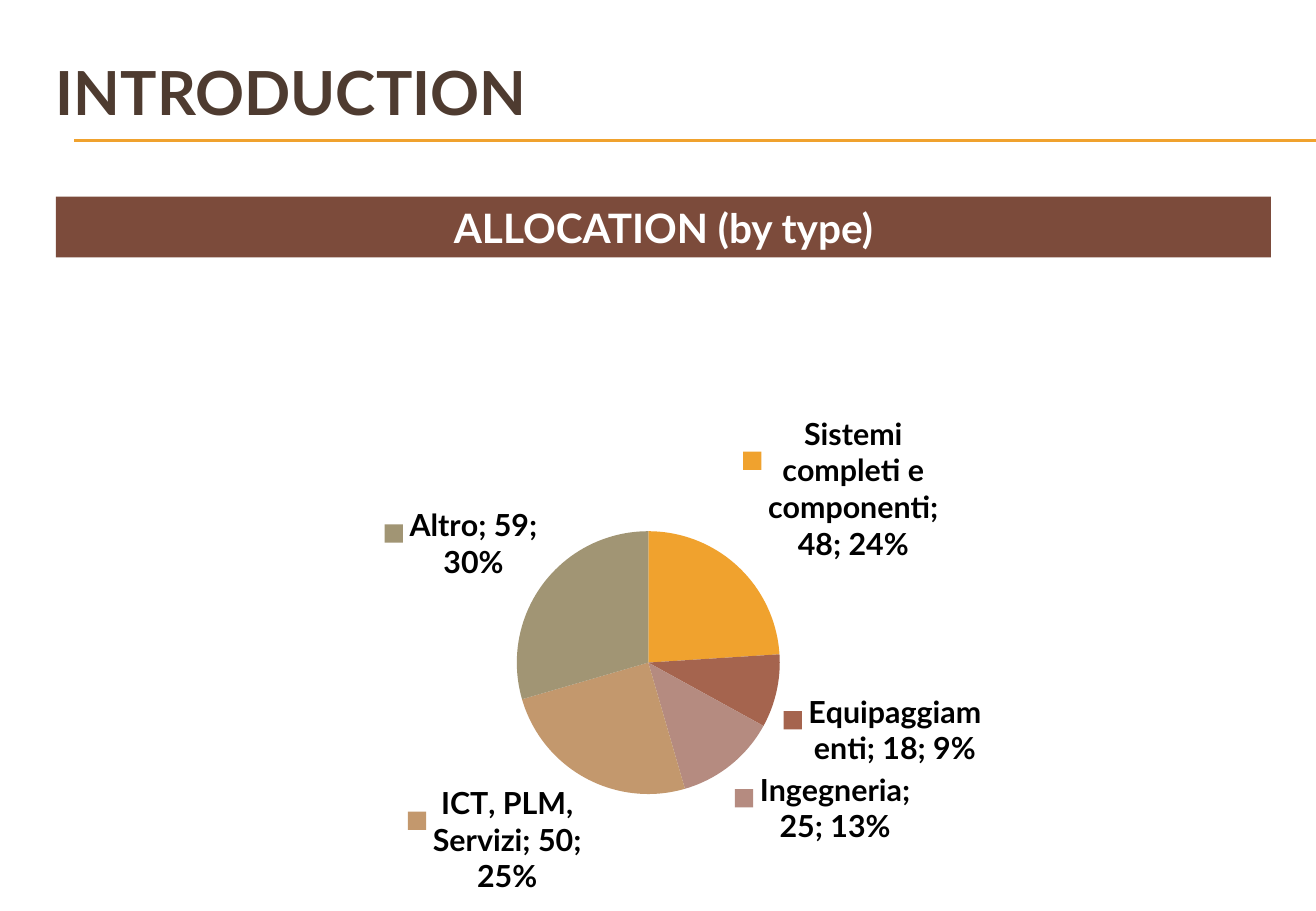
from lxml import etree
from pptx import Presentation
from pptx.chart.data import CategoryChartData as PieData
from pptx.dml.color import RGBColor
from pptx.enum.chart import XL_CHART_TYPE as Kind, XL_LABEL_POSITION as Spot
from pptx.enum.shapes import MSO_CONNECTOR as Line, MSO_SHAPE as Shape
from pptx.enum.text import MSO_ANCHOR as Anchor, PP_ALIGN as Align
from pptx.oxml.ns import qn
from pptx.util import Inches, Pt

WIDTH, HEIGHT = Inches(10.83), Inches(7.5)
FONT = "Lato"
BLACK = RGBColor(0x00, 0x00, 0x00)
WHITE = RGBColor(0xFF, 0xFF, 0xFF)
BROWN = RGBColor(0x4E, 0x3B, 0x30)
RUST = RGBColor(0x7C, 0x4B, 0x3B)
GOLD = RGBColor(0xF0, 0xA2, 0x2E)
BRICK = RGBColor(0xA5, 0x64, 0x4E)
ROSE = RGBColor(0xB5, 0x8B, 0x80)
TAN = RGBColor(0xC3, 0x98, 0x6D)
OLIVE = RGBColor(0xA1, 0x95, 0x74)

SHARES = [
    ("Sistemi completi e componenti", 48, GOLD),
    ("Equipaggiamenti", 18, BRICK),
    ("Ingegneria", 25, ROSE),
    ("ICT, PLM, Servizi", 50, TAN),
    ("Altro", 59, OLIVE),
]


def style(font, size, color):
    font.name, font.size, font.bold = FONT, Pt(size), True
    font.color.rgb = color


def add_title(slide, text, left, top, width, height):
    title = slide.shapes.title
    title.left, title.top, title.width, title.height = left, top, width, height
    frame = title.text_frame
    frame.text = text
    frame.vertical_anchor = Anchor.MIDDLE
    para = frame.paragraphs[0]
    para.alignment = Align.LEFT
    style(para.font, 36, BROWN)


def add_rule(slide, left, top, right):
    """Draw the double hairline under the title."""
    for y in (top, top + Inches(0.01)):
        rule = slide.shapes.add_connector(Line.STRAIGHT, left, y, right, y)
        rule.line.color.rgb = GOLD
        rule.line.width = Pt(0.75)
        etree.SubElement(rule._element.spPr, qn("a:effectLst"))


def add_banner(slide, text, left, top, width, height):
    bar = slide.shapes.add_shape(Shape.RECTANGLE, left, top, width, height)
    bar.shadow.inherit = False
    bar.fill.solid()
    bar.fill.fore_color.rgb = RUST
    bar.line.fill.background()
    bar.text_frame.text = text
    para = bar.text_frame.paragraphs[0]
    para.alignment = Align.CENTER
    style(para.font, 24, WHITE)


def place_plot(chart, **shares):
    """Fix the pie inside its chart; x, y, w, h are shares of the chart."""
    area = chart._chartSpace.chart.plotArea
    for old in area.findall(qn("c:layout")):
        area.remove(old)
    layout = etree.Element(qn("c:layout"))
    area.insert(0, layout)
    manual = etree.SubElement(layout, qn("c:manualLayout"))
    modes = {"layoutTarget": "inner", "xMode": "edge", "yMode": "edge"}
    for tag, val in (modes | shares).items():
        etree.SubElement(manual, qn("c:" + tag)).set("val", str(val))


def add_pie(slide, left, top, width, height):
    data = PieData()
    data.categories = [name for name, _, _ in SHARES]
    data.add_series("Series 1", [val for _, val, _ in SHARES])
    frame = slide.shapes.add_chart(Kind.PIE, left, top, width, height, data)
    chart = frame.chart
    chart.has_title = chart.has_legend = False
    style(chart.font, 18, BLACK)
    place_plot(chart, x=0.33, y=0.35, w=0.3, h=0.45)

    plot = chart.plots[0]
    plot.vary_by_categories = True
    pie = plot.series[0]
    for i, (_, _, color) in enumerate(SHARES):
        fill = pie.points[i].format.fill
        fill.solid()
        fill.fore_color.rgb = color

    labels = pie.data_labels
    style(labels.font, 18, BLACK)
    labels.position = Spot.OUTSIDE_END
    labels.show_legend_key = labels.show_category_name = True
    labels.show_value = labels.show_percentage = True
    gap = etree.Element(qn("c:separator"))
    gap.text = "; "
    labels._element.find(qn("c:showBubbleSize")).addnext(gap)


def main():
    deck = Presentation()
    deck.slide_width, deck.slide_height = WIDTH, HEIGHT
    slide = deck.slides.add_slide(deck.slide_layouts[5])
    add_rule(slide, Inches(0.61), Inches(1.15), WIDTH)
    add_title(slide, "INTRODUCTION",
              Inches(0.36), Inches(0.29), Inches(10.29), Inches(0.92))
    top = Inches(2.69)
    add_pie(slide, Inches(1.87), top, WIDTH * 2 // 3, HEIGHT - top)
    add_banner(slide, "ALLOCATION (by type)",
               Inches(0.46), Inches(1.62), Inches(10), Inches(0.5))
    deck.save("out.pptx")


if __name__ == "__main__":
    main()
